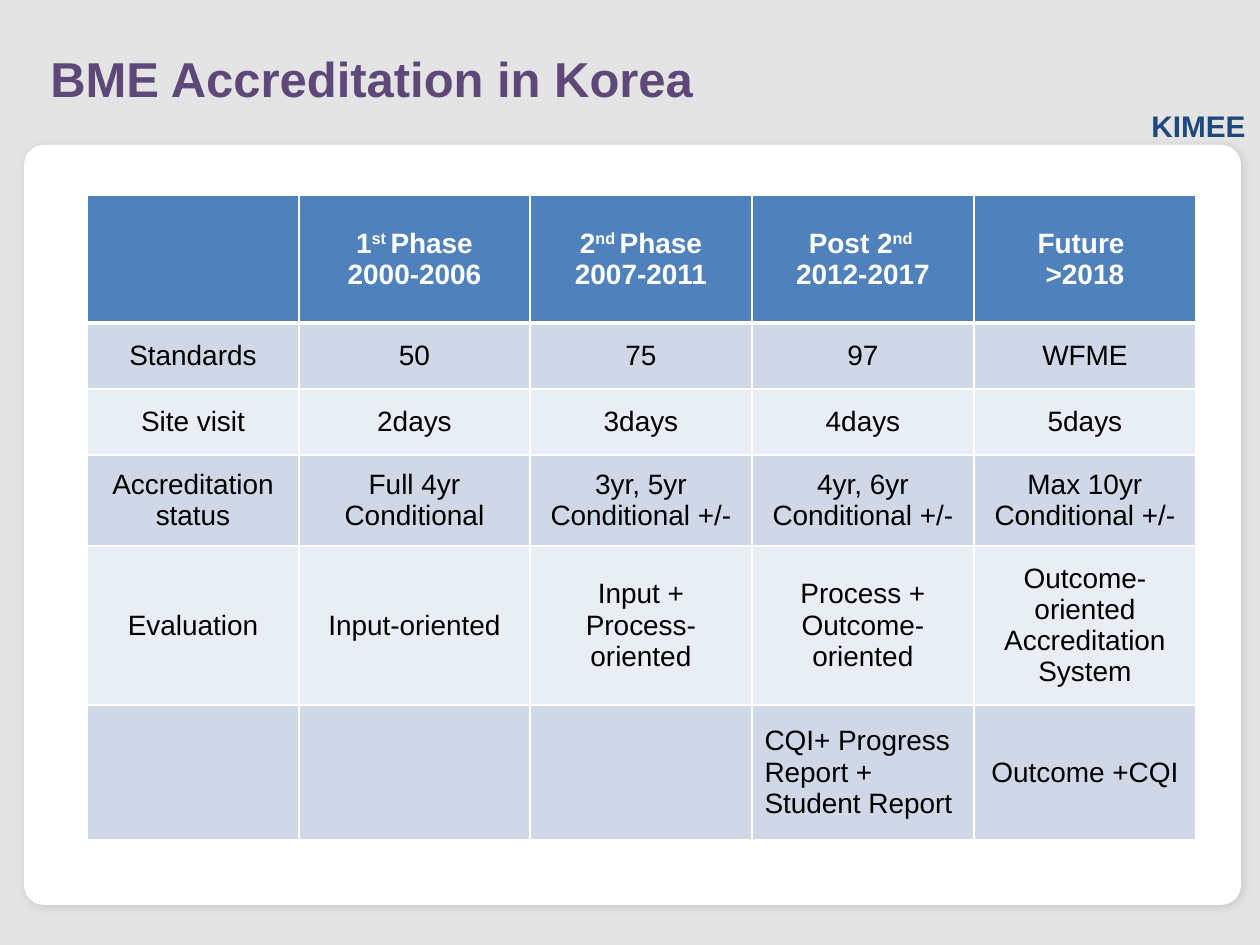
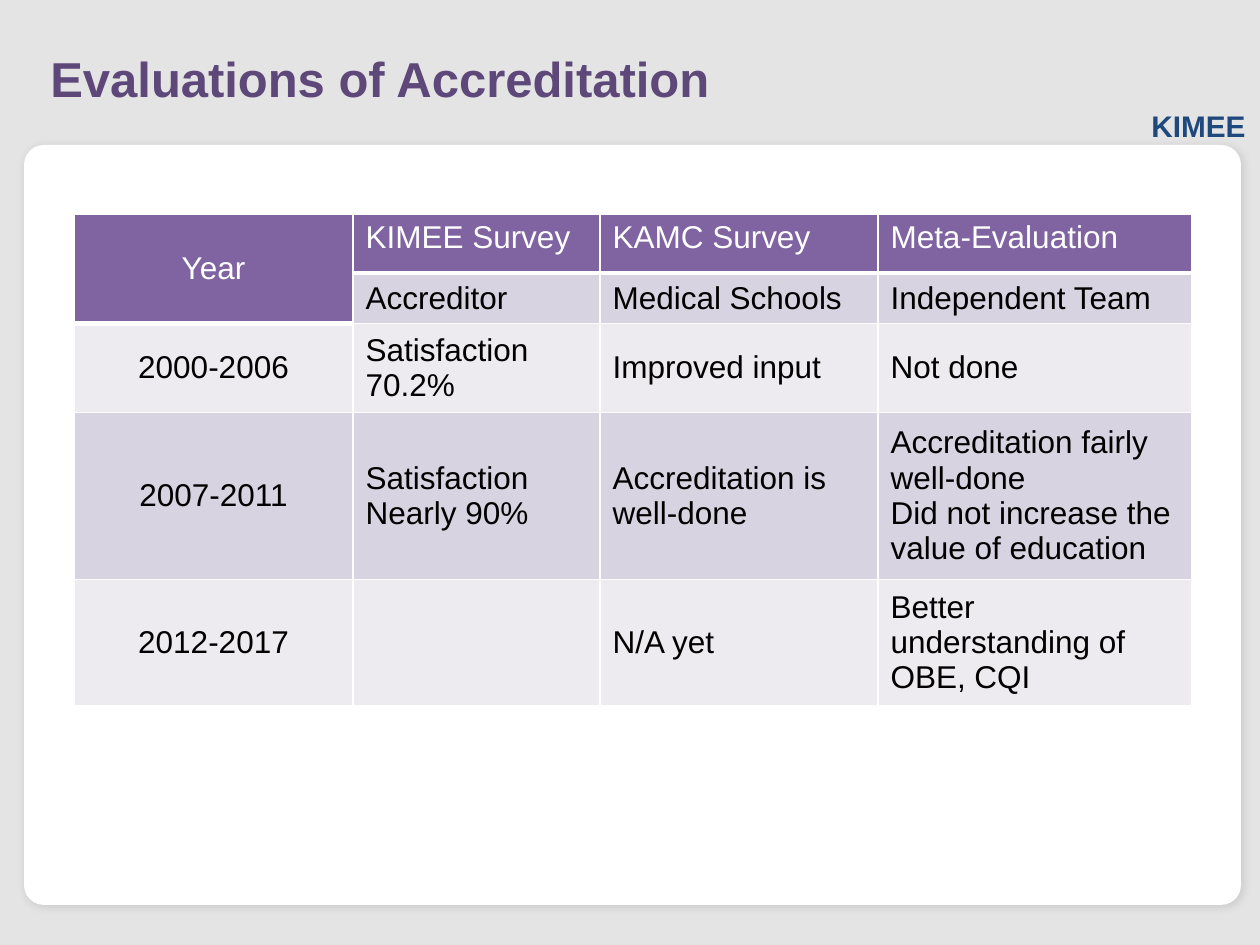
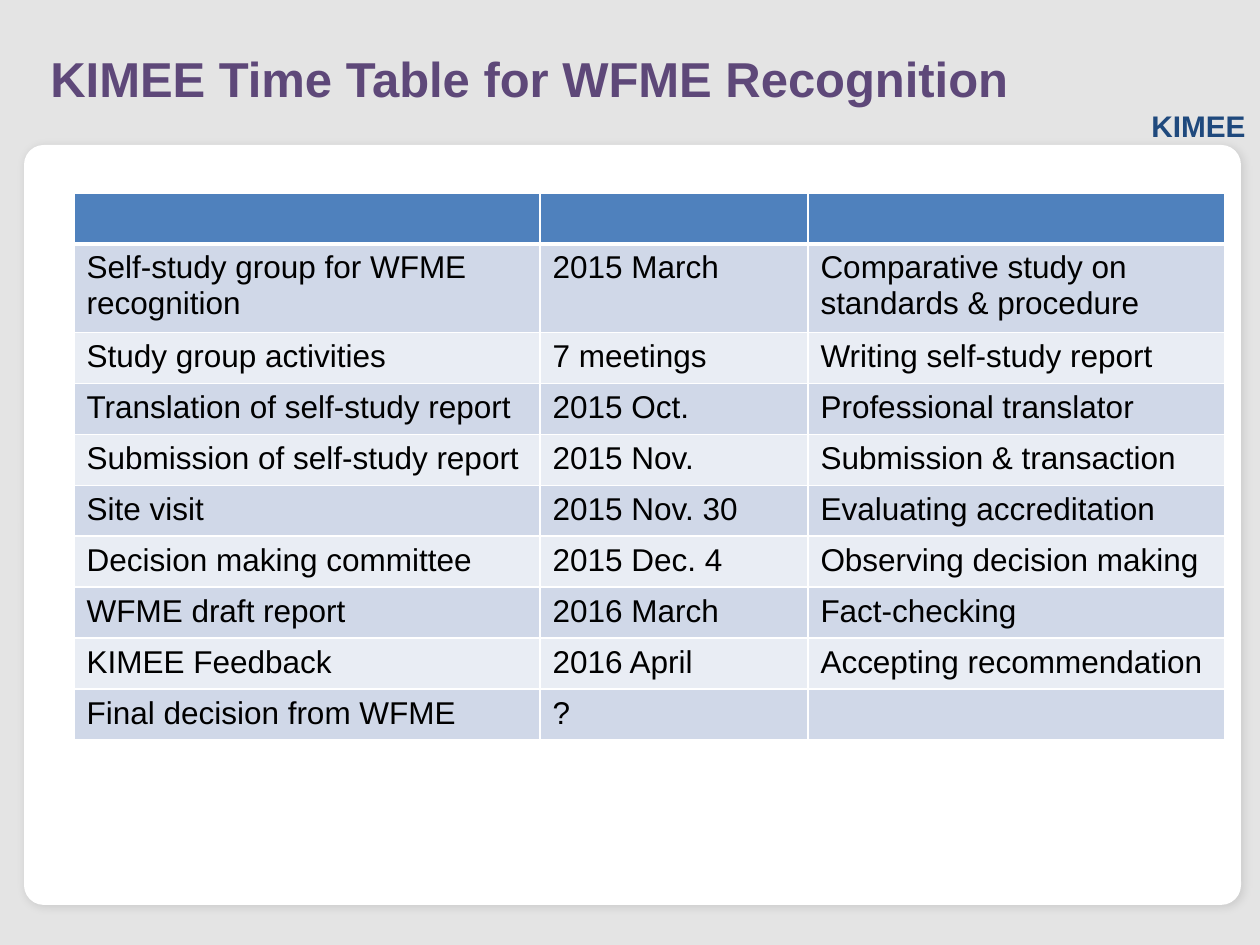
from dataclasses import dataclass

from lxml import etree
from pptx import Presentation
from pptx.dml.color import RGBColor
from pptx.enum.shapes import MSO_SHAPE
from pptx.enum.text import MSO_ANCHOR, PP_ALIGN
from pptx.oxml import parse_xml
from pptx.oxml.ns import nsdecls, qn
from pptx.util import Emu, Pt

PX = 914400 // 126  # one pixel at 126 to the inch


@dataclass(frozen=True)
class Theme:
    font: str = "Arial"
    backdrop: str = "E4E4E4"
    white: str = "FFFFFF"
    black: str = "000000"
    title: str = "5E4879"
    label: str = "1F497D"
    blue: tuple = ("4F81BD", "D0D8E8", "E9EDF4")  # header, odd rows, even rows
    purple: tuple = ("8064A2", "D8D3E0", "EDEAF0")
    title_size: int = 28
    label_size: int = 17
    body_size: int = 18
    compact_size: int = 16
    thin_line: int = 1
    header_line: int = 3


theme = Theme()


def write(frame, text, size=theme.body_size, color=theme.black, bold=False,
          align=PP_ALIGN.LEFT):
    """Newlines split paragraphs; text between carets is superscript."""
    for number, line in enumerate(text.split("\n")):
        paragraph = frame.paragraphs[0] if number == 0 else frame.add_paragraph()
        paragraph.alignment = align
        for part_number, part in enumerate(line.split("^")):
            if not part:
                continue
            run = paragraph.add_run()
            run.text = part
            run.font.name = theme.font
            run.font.size = Pt(size)
            run.font.bold = bold
            run.font.color.rgb = RGBColor.from_string(color)
            if part_number % 2:
                run.font._element.set("baseline", "30000")


def set_borders(cell, top, bottom):
    properties = cell._tc.get_or_add_tcPr()
    sides = {"lnL": theme.thin_line, "lnR": theme.thin_line, "lnT": top, "lnB": bottom}
    for position, (side, width) in enumerate(sides.items()):
        line = etree.Element(qn(f"a:{side}"), w=str(Pt(width)))
        fill = etree.SubElement(line, qn("a:solidFill"))
        etree.SubElement(fill, qn("a:srgbClr"), val=theme.white)
        properties.insert(position, line)


# Slide contents
slides = [
    dict(
        title="BME Accreditation in Korea",
        origin=(87, 195), palette=theme.blue, size=theme.compact_size,
        columns=[212, 231, 222, 222, 222], heights=[128, 66, 66, 91, 159, 135],
        centred={0, 1, 2, 3, 4}, left_cells={(5, 3)}, bold_header=True,
        middle_rows=range(6), merged_corner=False,
        rows=[
            ["", "1^st ^Phase\n2000-2006", "2^nd ^Phase\n2007-2011",
             "Post 2^nd ^\n2012-2017", "Future \n>2018"],
            ["Standards", "50", "75", "97", "WFME"],
            ["Site visit", "2days", "3days", "4days", "5days"],
            ["Accreditation status", "Full 4yr Conditional", "3yr, 5yr Conditional +/-",
             "4yr, 6yr Conditional +/-", "Max 10yr Conditional +/-"],
            ["Evaluation", "Input-oriented", "Input + Process- oriented",
             "Process + Outcome-oriented", "Outcome-oriented Accreditation System"],
            ["", "", "", "CQI+ Progress Report +\nStudent Report", "Outcome +CQI"],
        ],
    ),
    dict(
        title="Evaluations of Accreditation",
        origin=(74, 214), palette=theme.purple, size=theme.body_size,
        columns=[279, 247, 278, 314], heights=[59, 49, 89, 167, 120],
        centred={0}, left_cells=set(), bold_header=False,
        middle_rows=range(1, 5), merged_corner=True,
        rows=[
            ["Year", "KIMEE Survey", "KAMC Survey", "Meta-Evaluation"],
            ["", "Accreditor", "Medical Schools", "Independent Team"],
            ["2000-2006", "Satisfaction 70.2%", "Improved input", "Not done"],
            ["2007-2011", "Satisfaction\nNearly 90%", "Accreditation is well-done",
             "Accreditation fairly well-done\nDid not increase the value of education"],
            ["2012-2017", "", "N/A yet", "Better understanding of OBE, CQI"],
        ],
    ),
    dict(
        title="KIMEE Time Table for WFME Recognition",
        origin=(74, 193), palette=theme.blue, size=theme.body_size,
        columns=[466, 268, 417], heights=[51, 83] + [51] * 8,
        centred=set(), left_cells=set(), bold_header=False,
        middle_rows=(), merged_corner=False,
        rows=[
            ["", "", ""],
            ["Self-study group for WFME recognition", "2015 March",
             "Comparative study on standards & procedure"],
            ["Study group activities", "7 meetings", "Writing self-study report"],
            ["Translation of self-study report", "2015 Oct.", "Professional translator"],
            ["Submission of self-study report", "2015 Nov.", "Submission & transaction"],
            ["Site visit", "2015 Nov. 30", "Evaluating accreditation"],
            ["Decision making committee", "2015 Dec. 4", "Observing decision making"],
            ["WFME draft report", "2016 March", "Fact-checking"],
            ["KIMEE Feedback", "2016 April", "Accepting recommendation"],
            ["Final decision from WFME", "?", ""],
        ],
    ),
]

# Shared elements: kind, box in px, fill
panels = [
    (MSO_SHAPE.RECTANGLE, (0, 0, 1260, 945), theme.backdrop),
    (MSO_SHAPE.ROUNDED_RECTANGLE, (24, 145, 1217, 760), theme.white),
]
card_shadow = (
    f'<a:effectLst {nsdecls("a")}>'
    f'<a:outerShdw blurRad="{Pt(5)}" dist="{Pt(2)}" dir="2700000" rotWithShape="0">'
    f'<a:srgbClr val="{theme.black}"><a:alpha val="11000"/></a:srgbClr>'
    '</a:outerShdw></a:effectLst>'
)

presentation = Presentation()
presentation.slide_width = Emu(1260 * PX)
presentation.slide_height = Emu(945 * PX)

for content in slides:
    slide = presentation.slides.add_slide(presentation.slide_layouts[6])

    # Backdrop and white card
    for kind, box, color in panels:
        shape = slide.shapes.add_shape(kind, *[Emu(value * PX) for value in box])
        shape.fill.solid()
        shape.fill.fore_color.rgb = RGBColor.from_string(color)
        shape.line.fill.background()
        if kind == MSO_SHAPE.ROUNDED_RECTANGLE:
            shape.adjustments[0] = 0.026
            shape._element.spPr.append(parse_xml(card_shadow))
        else:
            shape.shadow.inherit = False

    # Corner label and title
    headings = [
        ("KIMEE", (1121, 102, 155, 52), theme.label_size, theme.label,
         PP_ALIGN.CENTER, MSO_ANCHOR.TOP),
        (content["title"], (38, 19, 1134, 117), theme.title_size, theme.title,
         PP_ALIGN.LEFT, MSO_ANCHOR.MIDDLE),
    ]
    for text, box, size, color, align, anchor in headings:
        frame = slide.shapes.add_textbox(*[Emu(value * PX) for value in box]).text_frame
        frame.word_wrap = True
        frame.vertical_anchor = anchor
        write(frame, text, size=size, color=color, bold=True, align=align)

    # Table grid
    columns, heights, rows = content["columns"], content["heights"], content["rows"]
    left, top = content["origin"]
    table = slide.shapes.add_table(
        len(rows), len(columns), Emu(left * PX), Emu(top * PX),
        Emu(sum(columns) * PX), Emu(sum(heights) * PX)).table
    for column, width in zip(table.columns, columns):
        column.width = Emu(width * PX)
    for row, height in zip(table.rows, heights):
        row.height = Emu(height * PX)
    if content["merged_corner"]:
        table.cell(0, 0).merge(table.cell(1, 0))

    # Table cells
    header_color, odd_color, even_color = content["palette"]
    for row_index, row in enumerate(rows):
        for column_index, text in enumerate(row):
            cell = table.cell(row_index, column_index)
            corner = content["merged_corner"] and column_index == 0
            last_header = 1 if corner else 0
            header = row_index <= last_header
            fill = header_color if header else odd_color if row_index % 2 else even_color
            cell.fill.solid()
            cell.fill.fore_color.rgb = RGBColor.from_string(fill)
            set_borders(
                cell,
                top=theme.header_line if row_index == last_header + 1 else theme.thin_line,
                bottom=theme.header_line if row_index == last_header else theme.thin_line)
            if not text:
                continue
            middle = corner or row_index in content["middle_rows"]
            cell.vertical_anchor = MSO_ANCHOR.MIDDLE if middle else MSO_ANCHOR.TOP
            centred = (column_index in content["centred"]
                       and (row_index, column_index) not in content["left_cells"])
            write(cell.text_frame, text, size=content["size"],
                  color=theme.white if header else theme.black,
                  bold=header and content["bold_header"],
                  align=PP_ALIGN.CENTER if centred else PP_ALIGN.LEFT)

presentation.save("out.pptx")
